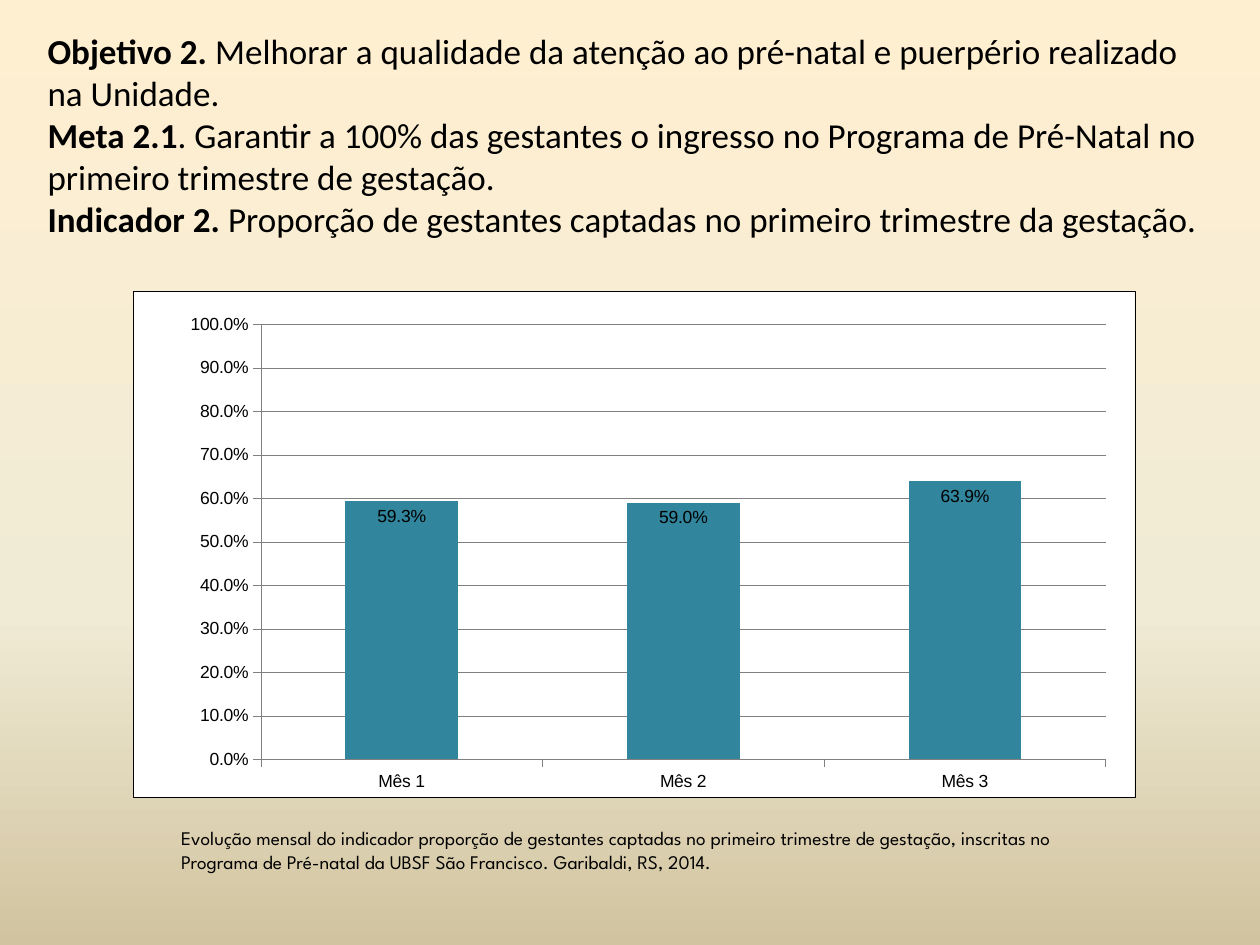
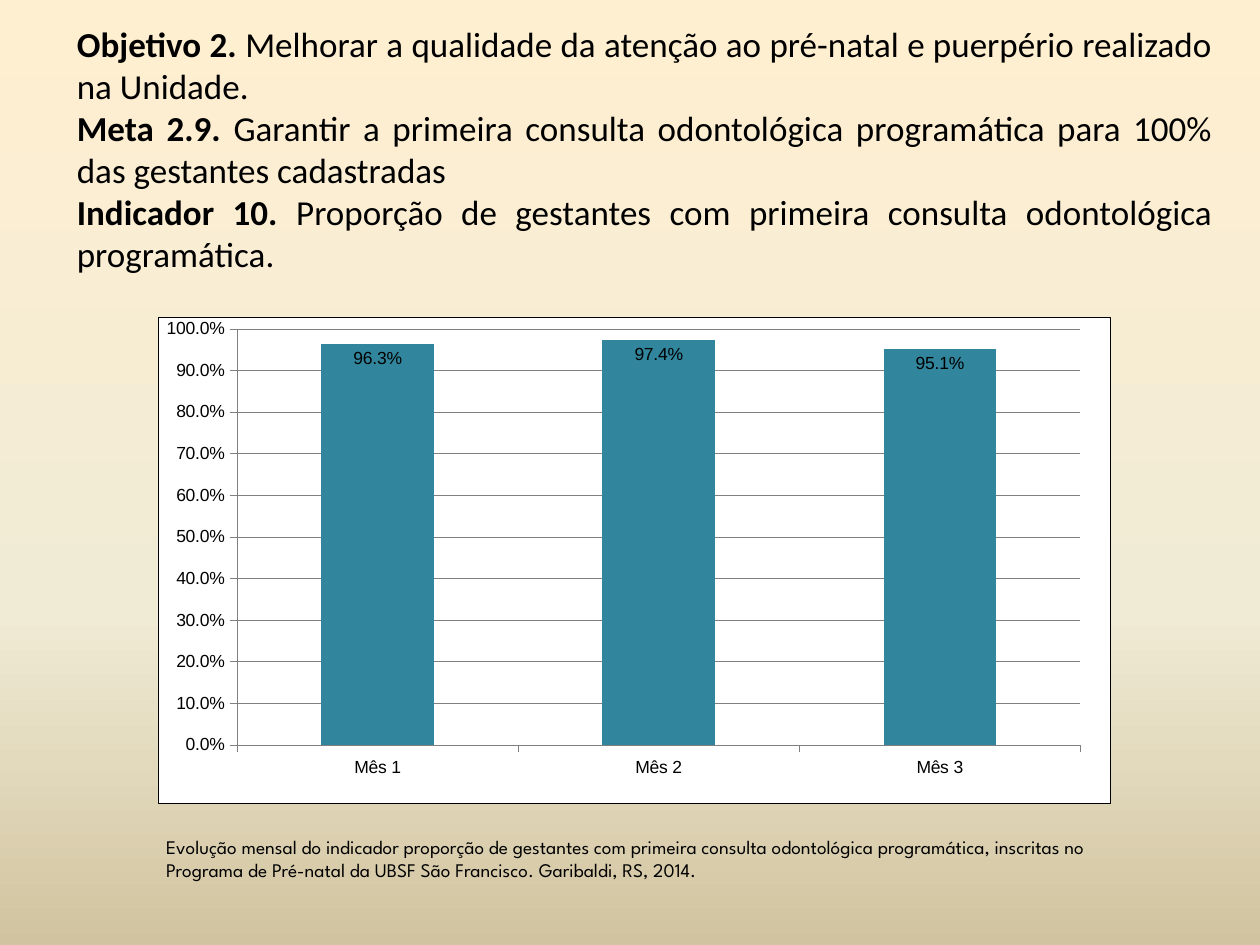
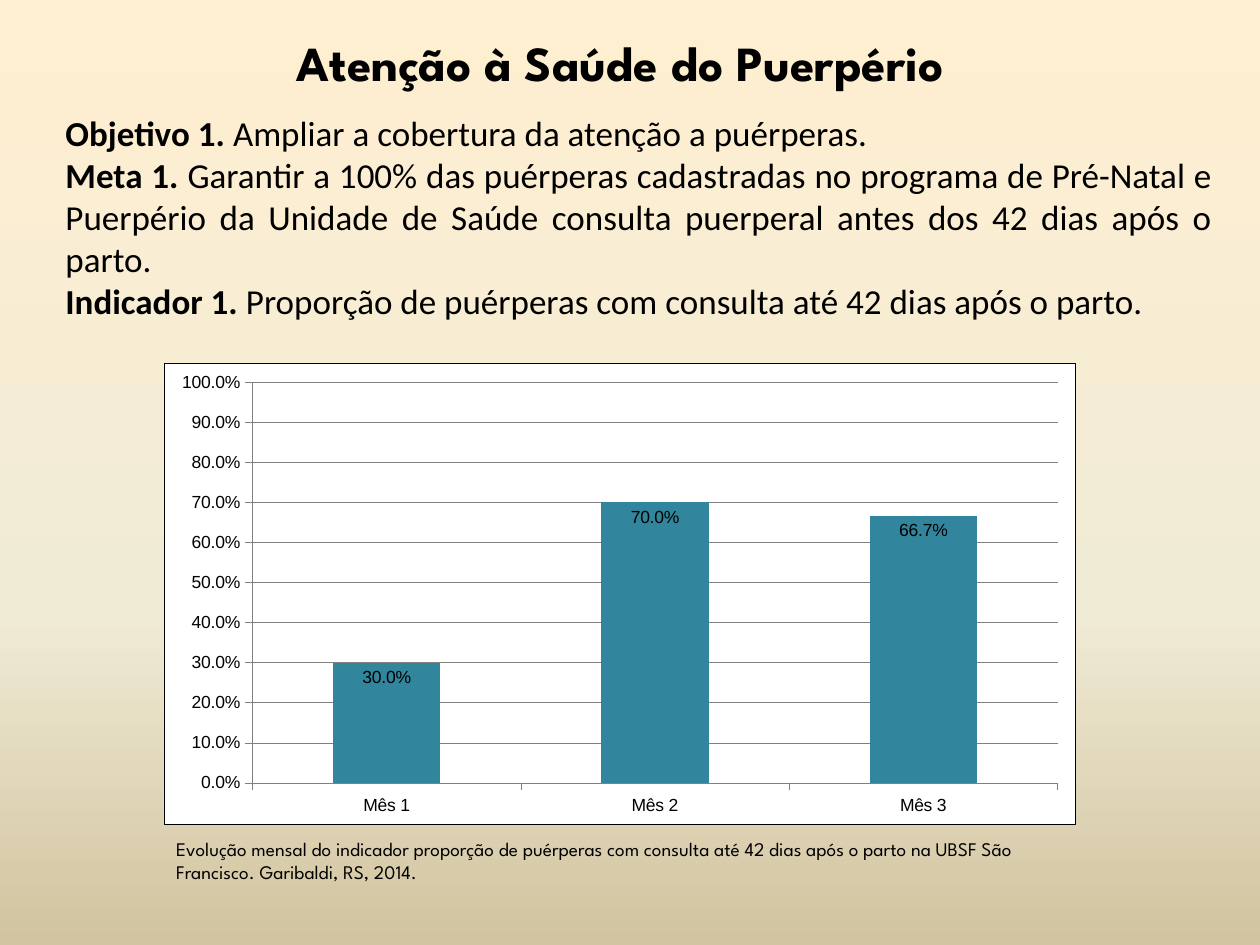
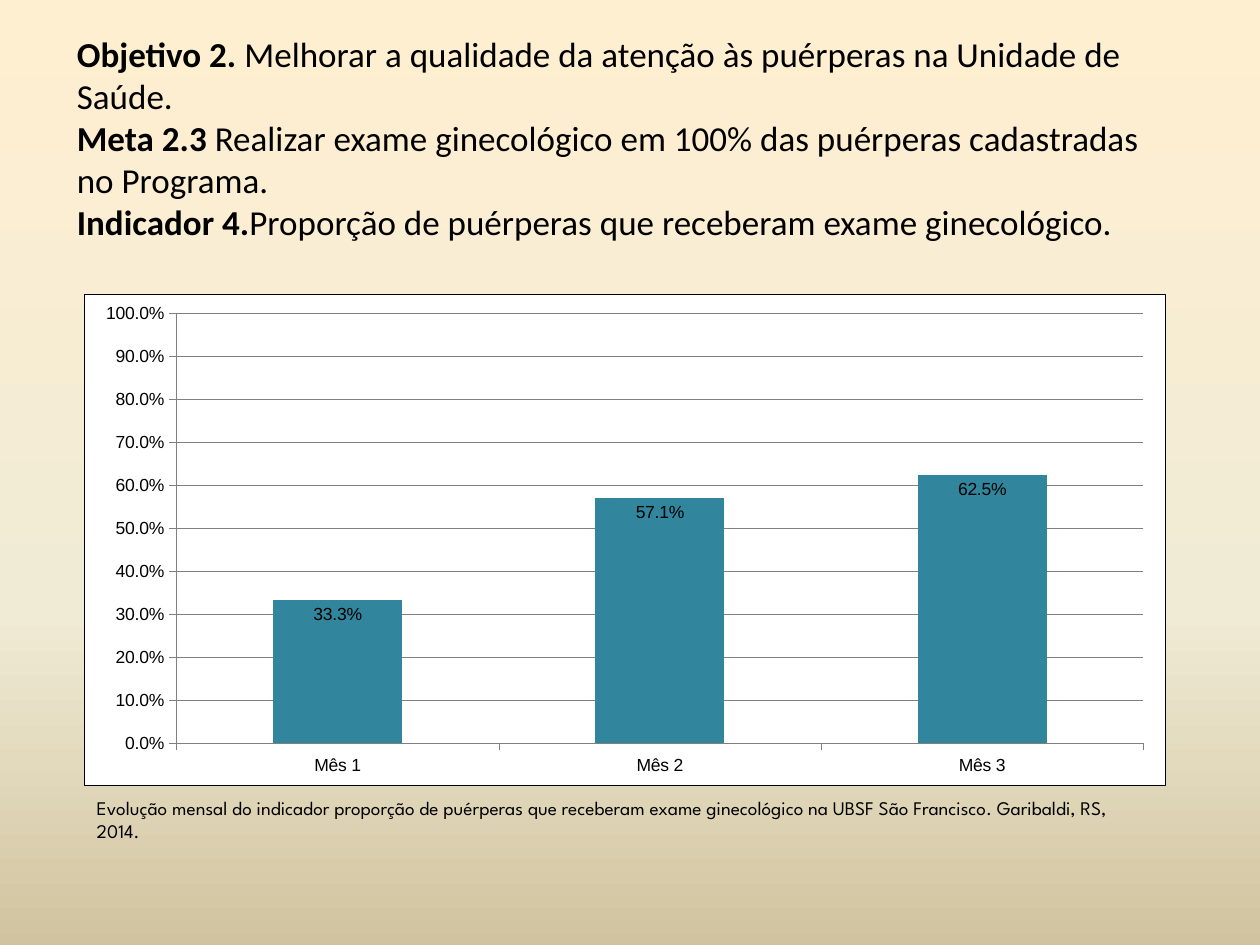
from lxml import etree
from pptx import Presentation
from pptx.chart.data import CategoryChartData
from pptx.dml.color import RGBColor
from pptx.enum.chart import XL_CHART_TYPE, XL_LABEL_POSITION, XL_TICK_MARK
from pptx.enum.text import MSO_ANCHOR, PP_ALIGN
from pptx.oxml import parse_xml
from pptx.oxml.ns import nsdecls, qn
from pptx.util import Cm, Pt

COLUMNS = XL_CHART_TYPE.COLUMN_CLUSTERED
INSIDE_END = XL_LABEL_POSITION.INSIDE_END
TICK_OUT = XL_TICK_MARK.OUTSIDE
LEFT, CENTER, JUSTIFY = PP_ALIGN.LEFT, PP_ALIGN.CENTER, PP_ALIGN.JUSTIFY
TOP, MIDDLE = MSO_ANCHOR.TOP, MSO_ANCHOR.MIDDLE

BLACK, WHITE, GREY, TEAL = "000000", "FFFFFF", "808080", "31859C"
BACKGROUND_STOPS = [(0, "FFEFD1"), (65, "F0EBD5"), (100, "D1C39F")]
GOAL_FONT, DISPLAY_FONT, CHART_FONT = "Calibri", "League Spartan", "Arial"
MONTHS = ["Mês 1", "Mês 2", "Mês 3"]
PERCENT = "0.0%"
HAIRLINE = Pt(0.25)

# Each slide: boxes are left, top, width, height in centimetres.
SLIDES = [
    {
        "goals_box": (0.71, 0.74, 24, 3.96), "align": LEFT, "anchor": MIDDLE,
        "goals": [
            ("Objetivo 2. ", "Melhorar a qualidade da atenção ao pré-natal e puerpério "
             "realizado na Unidade."),
            ("Meta 2.1", ". Garantir a 100% das gestantes o ingresso no Programa de "
             "Pré-Natal no primeiro trimestre de gestação."),
            ("Indicador 2. ", "Proporção de gestantes captadas no primeiro trimestre "
             "da gestação."),
        ],
        "chart_box": (2.69, 5.87, 20.19, 10.21), "values": [0.593, 0.59, 0.639],
        "plot": {"x": 0.127, "y": 0.065, "w": 0.844, "h": 0.86},
        "caption_box": (3.4, 16.54, 18.59, 1.6),
        "caption": "Evolução mensal do indicador proporção de gestantes captadas no "
                   "primeiro trimestre de gestação, inscritas no Programa de Pré-natal "
                   "da UBSF São Francisco. Garibaldi, RS, 2014.",
    },
    {
        "goals_box": (1.3, 0.33, 23.39, 5.38), "align": JUSTIFY, "anchor": TOP,
        "goals": [
            ("Objetivo 2. ", "Melhorar a qualidade da atenção ao pré-natal e puerpério "
             "realizado na Unidade."),
            ("Meta 2.9. ", "Garantir a primeira consulta odontológica programática para "
             "100% das gestantes cadastradas"),
            ("Indicador 10. ", "Proporção de gestantes com primeira consulta "
             "odontológica programática."),
        ],
        "chart_box": (3.18, 6.4, 19.2, 9.8), "values": [0.963, 0.974, 0.951],
        "plot": {"x": 0.083, "y": 0.023, "w": 0.886, "h": 0.857},
        "caption_box": (3.1, 16.71, 19.2, 1.65),
        "caption": "Evolução mensal do indicador proporção de gestantes com primeira "
                   "consulta odontológica programática, inscritas no Programa de "
                   "Pré-natal da UBSF São Francisco. Garibaldi, RS, 2014.",
    },
    {
        "title": "Atenção à Saúde do Puerpério", "title_box": (1.07, 0, 22.86, 2.51),
        "goals_box": (1.07, 2.13, 23.62, 4.52), "align": JUSTIFY, "anchor": TOP,
        "goals": [
            ("Objetivo 1. ", "Ampliar a cobertura da atenção a puérperas."),
            ("Meta 1. ", "Garantir a 100% das puérperas cadastradas no programa de "
             "Pré-Natal e Puerpério da Unidade de Saúde consulta puerperal antes dos "
             "42 dias após o parto."),
            ("Indicador 1. ", "Proporção de puérperas com consulta até 42 dias após "
             "o parto."),
        ],
        "chart_box": (3.3, 7.32, 18.39, 9.3), "values": [0.3, 0.7, 0.667],
        "caption_box": (3.3, 16.76, 18.39, 2.29),
        "caption": "Evolução mensal do indicador proporção de puérperas com consulta "
                   "até 42 dias após o parto na UBSF São Francisco. Garibaldi, RS, 2014.",
    },
    {
        "goals_box": (1.3, 0.53, 22.53, 5.38), "align": LEFT, "anchor": TOP,
        "goals": [
            ("Objetivo 2. ", "Melhorar a qualidade da atenção às puérperas na Unidade "
             "de Saúde."),
            ("Meta 2.3 ", "Realizar exame ginecológico em 100% das puérperas "
             "cadastradas no Programa."),
            ("Indicador 4.", "Proporção de puérperas que receberam exame ginecológico."),
        ],
        "chart_box": (1.7, 5.92, 21.79, 9.91), "values": [0.333, 0.571, 0.625],
        "caption_box": (1.7, 15.93, 21.79, 2.08),
        "caption": "Evolução mensal do indicador proporção de puérperas que receberam "
                   "exame ginecológico na UBSF São Francisco. Garibaldi, RS, 2014.",
    },
]


def color(hex_code):
    return RGBColor.from_string(hex_code)


def place(box):
    return [Cm(length) for length in box]


def set_background(master):
    """Give every slide the same vertical gradient through the master."""
    fill = master.background.fill
    fill.gradient()
    fill.gradient_angle = 270
    stops = master.element.find(".//" + qn("a:gsLst"))
    for stop in list(stops):
        stops.remove(stop)
    for percent, hex_code in BACKGROUND_STOPS:
        stop = etree.SubElement(stops, qn("a:gs"), pos=str(percent * 1000))
        etree.SubElement(stop, qn("a:srgbClr"), val=hex_code)


def add_text(page, box, paragraphs, font, size, align=LEFT, anchor=TOP):
    """Add a text box; each paragraph is a list of (text, bold) runs."""
    frame = page.shapes.add_textbox(*place(box)).text_frame
    frame.word_wrap = True
    frame.vertical_anchor = anchor
    for index, spans in enumerate(paragraphs):
        para = frame.paragraphs[0] if index == 0 else frame.add_paragraph()
        para.alignment = align
        for text, bold in spans:
            span = para.add_run()
            span.text = text
            span.font.name = font
            span.font.size = Pt(size)
            span.font.bold = bold
            span.font.color.rgb = color(BLACK)


def area_format(line=None):
    """Return a white c:spPr with a hairline border or none."""
    stroke = (f'<a:solidFill><a:srgbClr val="{line}"/></a:solidFill>'
              if line else "<a:noFill/>")
    return parse_xml(
        f'<c:spPr {nsdecls("c", "a")}><a:solidFill><a:srgbClr val="{WHITE}"/></a:solidFill>'
        f'<a:ln w="{HAIRLINE}">{stroke}</a:ln></c:spPr>')


def set_plot_layout(plot_area, plot):
    """Fix the inner plot rectangle as fractions of the chart."""
    for old in plot_area.findall(qn("c:layout")):
        plot_area.remove(old)
    layout = etree.Element(qn("c:layout"))
    manual = etree.SubElement(layout, qn("c:manualLayout"))
    settings = {"layoutTarget": "inner", "xMode": "edge", "yMode": "edge", **plot}
    for name, value in settings.items():
        etree.SubElement(manual, qn("c:" + name), val=str(value))
    plot_area.insert(0, layout)


def style_line(line, hex_code):
    line.color.rgb = color(hex_code)
    line.width = HAIRLINE


def style_axes(chart):
    for axis in (chart.category_axis, chart.value_axis):
        axis.major_tick_mark = TICK_OUT
        style_line(axis.format.line, GREY)
    scale = chart.value_axis
    scale.minimum_scale, scale.maximum_scale, scale.major_unit = 0, 1, 0.1
    scale.has_major_gridlines = True
    style_line(scale.major_gridlines.format.line, GREY)
    scale.tick_labels.number_format = PERCENT
    scale.tick_labels.number_format_is_linked = False


def style_columns(plot):
    plot.gap_width = 150
    plot.vary_by_categories = False
    fill = plot.series[0].format.fill
    fill.solid()
    fill.fore_color.rgb = color(TEAL)
    plot.has_data_labels = True
    labels = plot.data_labels
    labels.show_value = True
    labels.position = INSIDE_END
    labels.number_format = PERCENT
    labels.number_format_is_linked = False


def add_month_chart(page, box, values, plot=None):
    data = CategoryChartData(number_format=PERCENT)
    data.categories = MONTHS
    data.add_series("Series 1", values)
    chart = page.shapes.add_chart(COLUMNS, *place(box), data).chart
    chart.has_legend = False
    chart.has_title = False
    chart.font.name = CHART_FONT
    chart.font.size = Pt(10)
    chart.font.color.rgb = color(BLACK)
    style_axes(chart)
    style_columns(chart.plots[0])
    body = chart.element.find(qn("c:chart"))
    body.addnext(area_format(BLACK))
    plot_area = body.find(qn("c:plotArea"))
    plot_area.append(area_format())
    if plot:
        set_plot_layout(plot_area, plot)


def add_indicator_slide(deck, content):
    page = deck.slides.add_slide(deck.slide_layouts[6])
    if "title" in content:
        add_text(page, content["title_box"], [[(content["title"], True)]],
                 DISPLAY_FONT, 28, CENTER, MIDDLE)
    goals = [[(label, True), (text, False)] for label, text in content["goals"]]
    add_text(page, content["goals_box"], goals, GOAL_FONT, 20,
             content["align"], content["anchor"])
    add_month_chart(page, content["chart_box"], content["values"], content.get("plot"))
    add_text(page, content["caption_box"], [[(content["caption"], False)]],
             DISPLAY_FONT, 11)


def main():
    deck = Presentation()
    deck.slide_width, deck.slide_height = Cm(25.4), Cm(19.05)
    set_background(deck.slide_master)
    for content in SLIDES:
        add_indicator_slide(deck, content)
    deck.save("out.pptx")


if __name__ == "__main__":
    main()
